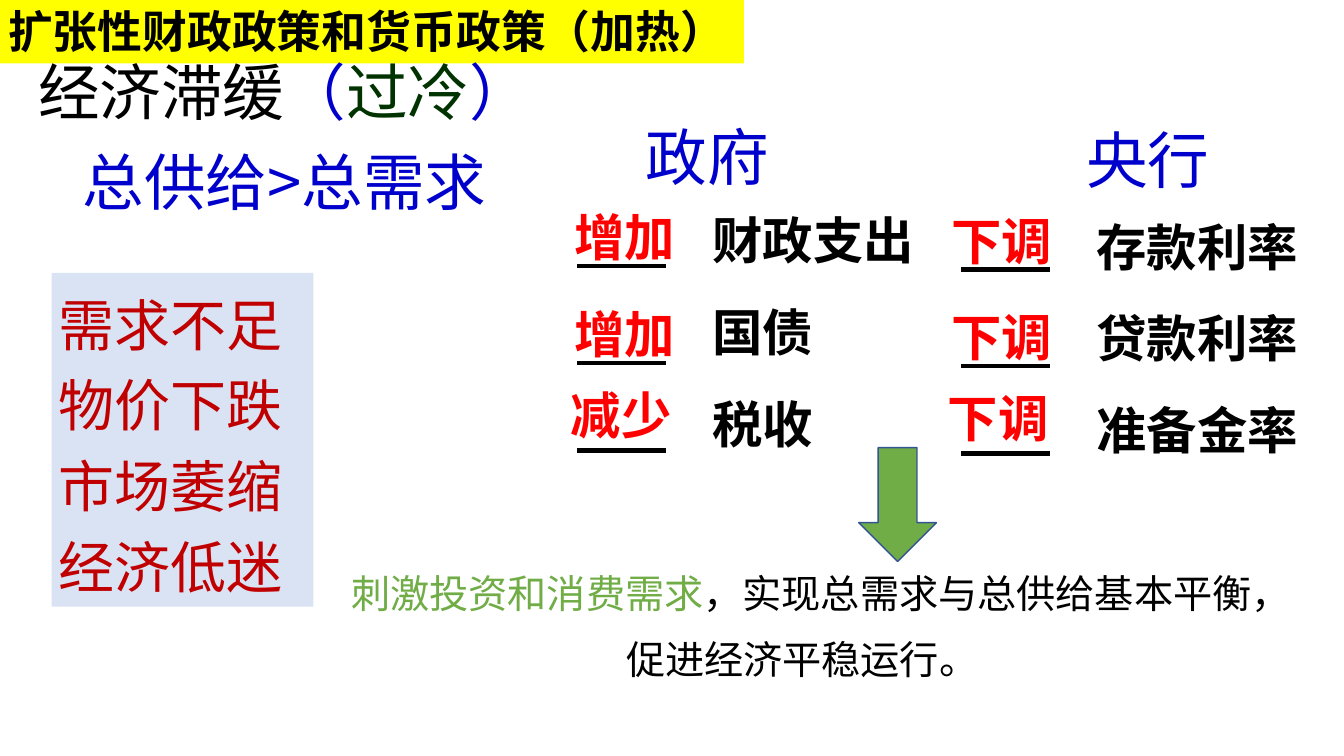
from lxml.etree import SubElement
from pptx import Presentation
from pptx.dml.color import RGBColor
from pptx.enum.shapes import MSO_CONNECTOR, MSO_SHAPE
from pptx.enum.text import MSO_ANCHOR, MSO_AUTO_SIZE, PP_ALIGN
from pptx.oxml.ns import qn
from pptx.util import Cm, Pt

FONT = "Noto Sans CJK SC"
BLACK = RGBColor(0x00, 0x00, 0x00)
BLUE = RGBColor(0x00, 0x00, 0xCC)
RED = RGBColor(0xFF, 0x00, 0x00)
CRIMSON = RGBColor(0xC0, 0x00, 0x00)
PINE = RGBColor(0x00, 0x33, 0x00)
GREEN = RGBColor(0x70, 0xAD, 0x47)
NAVY = RGBColor(0x32, 0x54, 0x91)
PALE = RGBColor(0xDA, 0xE3, 0xF3)
YELLOW = RGBColor(0xFF, 0xFF, 0x00)


def write(shape, lines, size, color, bold=False, align=PP_ALIGN.LEFT,
          pitch=1.0, gap=0, wrap=True):
    frame = shape.text_frame
    frame.word_wrap = wrap
    frame.auto_size = MSO_AUTO_SIZE.NONE
    frame.vertical_anchor = MSO_ANCHOR.TOP
    for index, line in enumerate(lines):
        para = frame.add_paragraph() if index else frame.paragraphs[0]
        para.alignment = align
        para.line_spacing = pitch
        para.space_before = Pt(gap if index else 0)
        parts = [(line, color)] if isinstance(line, str) else line
        for words, tint in parts:
            run = para.add_run()
            run.text = words
            if len(parts) > 1:
                run.font.color.rgb = tint
        font = para.font
        font.name = FONT
        font.size = Pt(size)
        font.bold = bold
        font.color.rgb = color
        props = para._p.pPr.find(qn("a:defRPr"))
        SubElement(props, qn("a:ea")).set("typeface", FONT)


def place(shape, left, top, width, height):
    shape.left, shape.top = Cm(left), Cm(top)
    shape.width, shape.height = Cm(width), Cm(height)


def label(slide, box, lines, size, color, **style):
    shape = slide.shapes.add_textbox(*map(Cm, box))
    write(shape, lines, size, color, **style)
    return shape


def block(slide, kind, box, fill):
    shape = slide.shapes.add_shape(kind, *map(Cm, box))
    shape.shadow.inherit = False
    shape.fill.solid()
    shape.fill.fore_color.rgb = fill
    shape.line.fill.background()
    return shape


def rule(slide, left, top):
    line = slide.shapes.add_connector(
        MSO_CONNECTOR.STRAIGHT, Cm(left), Cm(top), Cm(left + 2.23), Cm(top))
    line.line.color.rgb = BLACK
    line.line.width = Pt(3)
    SubElement(line._element.spPr, qn("a:effectLst"))


def policy(slide, name, verbs, tools, head, verb, bar, tool, drop):
    label(slide, (head, 2.87 + drop, 3.86, 2.13), [name], 44, BLUE,
          align=PP_ALIGN.CENTER)
    rows = zip(verbs, (0, 0, -0.08), (5.08, 7.52, 9.55), (6.71, 9.14, 11.35))
    for text, shift, top, base in rows:
        label(slide, (verb + shift, top + drop, 3.05, 1.78), [text], 36, RED,
              bold=True, wrap=False)
        rule(slide, bar, base + drop)
    label(slide, (tool, 5 + 2 * drop, 6.48, 6.86), tools, 36, BLACK,
          bold=True, pitch=1.1, gap=18)


def main():
    deck = Presentation()
    deck.slide_width, deck.slide_height = Cm(33.87), Cm(19.05)
    slide = deck.slides.add_slide(deck.slide_layouts[5])

    title = slide.shapes.title
    place(title, -0.05, -0.03, 18.8, 1.63)
    title.fill.solid()
    title.fill.fore_color.rgb = YELLOW
    write(title, ["扩张性财政政策和货币政策（加热）"], 32, BLACK, bold=True)

    signs = block(slide, MSO_SHAPE.RECTANGLE, (1.3, 6.88, 6.6, 8.41), PALE)
    write(signs, ["需求不足", "物价下跌", "市场萎缩", "经济低迷"],
          40, CRIMSON, pitch=1.2)
    frame = signs.text_frame
    frame.margin_left = frame.margin_right = Cm(0.18)
    frame.margin_top = frame.margin_bottom = Cm(0.1)

    policy(slide, "政府", ["增加", "增加", "减少"],
           ["财政支出", "国债", "税收"], 15.9, 14.22, 14.55, 17.7, 0)
    policy(slide, "央行", ["下调"] * 3,
           ["存款利率", "贷款利率", "准备金率"], 27, 23.72, 24.23, 27.38, 0.08)

    arrow = block(slide, MSO_SHAPE.DOWN_ARROW, (21.64, 11.28, 1.96, 2.87), GREEN)
    arrow.line.color.rgb = NAVY
    arrow.line.width = Pt(1)

    goal = label(slide, (7.21, 13.74, 26.01, 3.61),
                 [[("刺激投资和消费需求", GREEN),
                   ("，实现总需求与总供给基本平衡，促进经济平稳运行。", BLACK)]],
                 28, BLACK, align=PP_ALIGN.CENTER, pitch=1.4)
    goal.text_frame.paragraphs[0]._p.pPr.set("indent", str(Cm(0.95)))

    label(slide, (-0.05, 1.6, 14.45, 4.19),
          [[("经济滞缓", BLACK), ("（", BLUE), ("过冷", PINE), ("）", BLUE)],
           "总供给>总需求"],
          44, BLUE, align=PP_ALIGN.CENTER, pitch=0.8, gap=22)

    deck.save("out.pptx")


if __name__ == "__main__":
    main()
